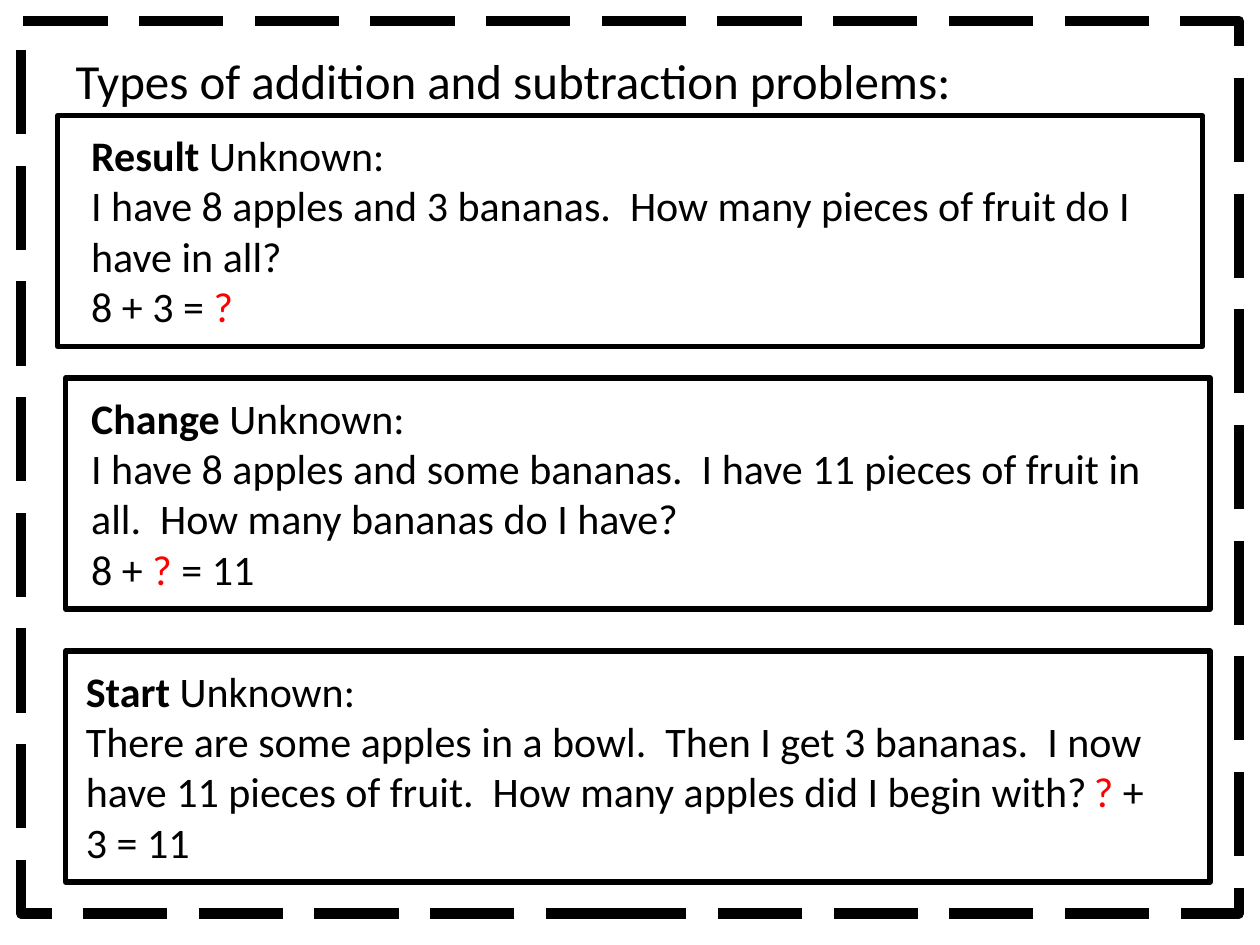
from dataclasses import dataclass
from pptx import Presentation, util as u
from pptx.dml.color import RGBColor
from pptx.enum import dml, shapes, text
from pptx.oxml import ns, xmlchemy

COLUMNS, ROWS = 120, 90


@dataclass(frozen=True)
class Theme:
    font: str = "Calibri"
    ink: RGBColor = RGBColor(0, 0, 0)
    unknown: RGBColor = RGBColor(255, 0, 0)
    title_size: float = 28
    body_size: float = 24
    frame_line: float = 6
    card_line: float = 3


@dataclass(frozen=True)
class Area:
    column: float
    row: float
    columns: float
    rows: float


@dataclass(frozen=True)
class Problem:
    card_column: float
    text_column: float
    row: float
    kind: str
    story: str
    equation: tuple[str, str, str]
    same_line: bool = False


THEME = Theme()
PROBLEMS = (
    Problem(5.5, 7.5, 11, "Result",
            "I have 8 apples and 3 bananas.  How many pieces of fruit do I have in all?",
            ("8 + 3 = ", "?", "")),
    Problem(6.25, 7.5, 36, "Change",
            "I have 8 apples and some bananas.  I have 11 pieces of fruit in all.  "
            "How many bananas do I have?",
            ("8 + ", "?", " = 11")),
    Problem(6.25, 7, 62, "Start",
            "There are some apples in a bowl.  Then I get 3 bananas.  "
            "I now have 11 pieces of fruit.  How many apples did I begin with?",
            ("", "? ", "+ 3 = 11"), same_line=True),
)


def bounds(deck, area: Area) -> tuple[int, int, int, int]:
    column, row = deck.slide_width / COLUMNS, deck.slide_height / ROWS
    return (round(area.column * column), round(area.row * row),
            round(area.columns * column), round(area.rows * row))


def add_outline(deck, page, area: Area, width: float, dash=None) -> None:
    box = page.shapes.add_shape(shapes.MSO_SHAPE.RECTANGLE, *bounds(deck, area))
    box.shadow.inherit = False
    box.fill.background()
    box.line.color.rgb = THEME.ink
    box.line.width = u.Pt(width)
    if dash is not None:
        box.line.dash_style = dash


def add_text(para, words: str, *, size: float = THEME.body_size,
             color: RGBColor = THEME.ink, bold: bool = False) -> None:
    if not words:
        return
    span = para.add_run()
    span.text = words
    span.font.name = THEME.font
    span.font.size = u.Pt(size)
    span.font.color.rgb = color
    span.font.bold = bold


def add_tab_stop(para, position: int) -> None:
    stops = xmlchemy.OxmlElement("a:tabLst")
    stop = xmlchemy.OxmlElement("a:tab")
    stop.set("pos", str(position))
    stop.set("algn", "l")
    stops.append(stop)
    para._p.get_or_add_pPr().append(stops)


def add_title(deck, page, words: str) -> None:
    box = page.shapes.title
    box.left, box.top, box.width, box.height = bounds(deck, Area(6, 4.2, 105, 6.85))
    frame = box.text_frame
    frame.word_wrap = True
    frame.auto_size = text.MSO_AUTO_SIZE.SHAPE_TO_FIT_TEXT
    frame.vertical_anchor = text.MSO_ANCHOR.TOP
    para = frame.paragraphs[0]
    para.alignment = text.PP_ALIGN.LEFT
    add_text(para, words, size=THEME.title_size)


def add_problem(deck, page, problem: Problem) -> None:
    add_outline(deck, page, Area(problem.card_column, problem.row, 109, 22), THEME.card_line)
    area = Area(problem.text_column, problem.row + 0.75, 105, 20.6)
    frame = page.shapes.add_textbox(*bounds(deck, area)).text_frame
    frame.word_wrap = True
    frame.auto_size = text.MSO_AUTO_SIZE.SHAPE_TO_FIT_TEXT
    heading = frame.paragraphs[0]
    add_text(heading, problem.kind, bold=True)
    add_text(heading, " Unknown:")
    para = frame.add_paragraph()
    add_text(para, problem.story)
    if problem.same_line:
        add_tab_stop(para, u.Inches(1.3))
        add_text(para, "\t")
    else:
        para = frame.add_paragraph()
    before, unknown, after = problem.equation
    add_text(para, before)
    add_text(para, unknown, color=THEME.unknown)
    add_text(para, after)


def main() -> None:
    deck = Presentation()
    deck.slide_width, deck.slide_height = u.Inches(10), u.Inches(7.5)
    page = deck.slides.add_slide(deck.slide_layouts[5])
    add_outline(deck, page, Area(2, 2, 116, 85), THEME.frame_line, dml.MSO_LINE.LONG_DASH)
    add_title(deck, page, "Types of addition and subtraction problems:")
    for problem in PROBLEMS:
        add_problem(deck, page, problem)
    deck.save("out.pptx")


if __name__ == "__main__":
    main()
